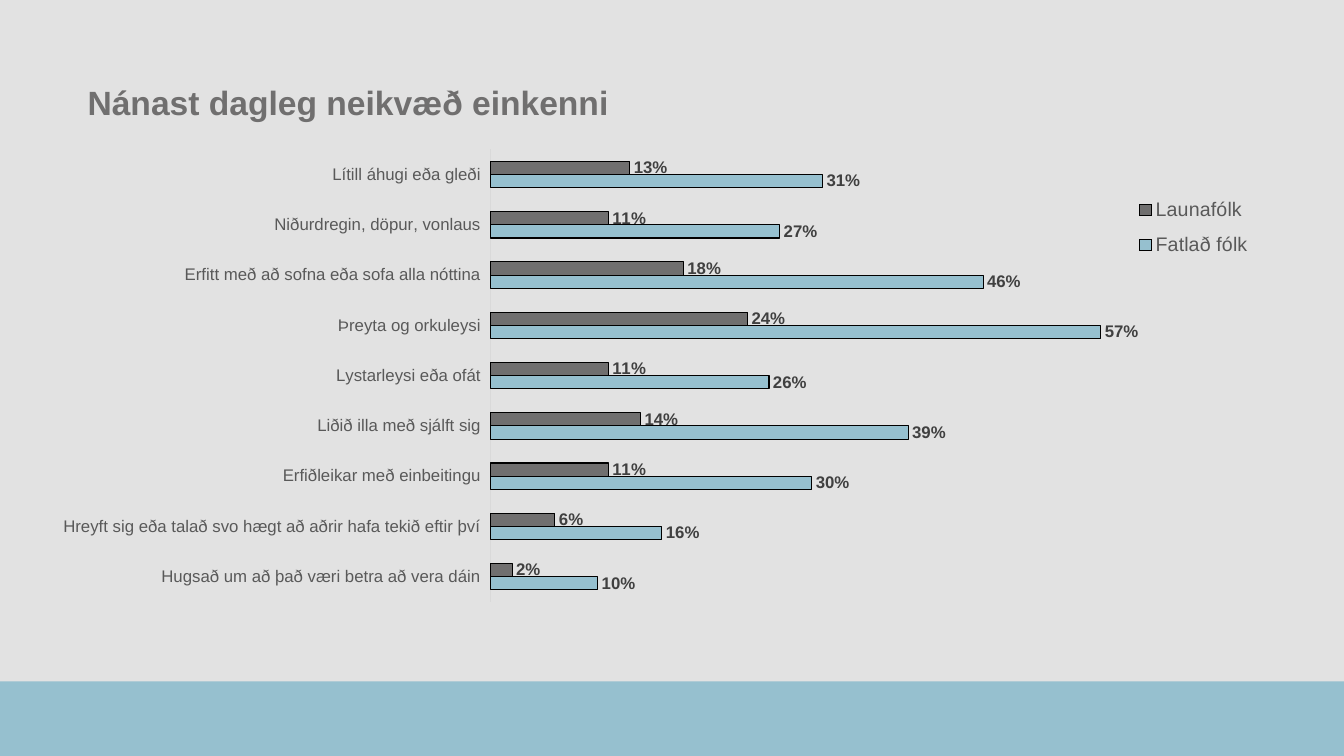
from lxml import etree
from pptx import Presentation
from pptx.chart.data import CategoryChartData
from pptx.dml.color import RGBColor
from pptx.enum.chart import XL_CHART_TYPE, XL_LABEL_POSITION, XL_LEGEND_POSITION, XL_TICK_LABEL_POSITION, XL_TICK_MARK
from pptx.enum.shapes import MSO_SHAPE
from pptx.enum.text import MSO_ANCHOR
from pptx.oxml import parse_xml
from pptx.oxml.ns import nsdecls, qn
from pptx.util import Inches, Pt

BAR_CLUSTERED = XL_CHART_TYPE.BAR_CLUSTERED
OUTSIDE_END = XL_LABEL_POSITION.OUTSIDE_END
BOTTOM = XL_LEGEND_POSITION.BOTTOM
LOW = XL_TICK_LABEL_POSITION.LOW
NO_TICK = XL_TICK_MARK.NONE
RECTANGLE = MSO_SHAPE.RECTANGLE
MIDDLE = MSO_ANCHOR.MIDDLE

BLUE = "96C0CF"
GREY = "706F6F"
TEXT_GREY = "595959"


def color(value):
    return RGBColor.from_string(value)


def manual_layout(x, y, w, h, inner=False):
    layout = parse_xml(f"<c:layout {nsdecls('c')}><c:manualLayout/></c:layout>")
    settings = [("layoutTarget", "inner")] if inner else []
    settings += [("xMode", "edge"), ("yMode", "edge"), ("x", x), ("y", y), ("w", w), ("h", h)]
    for tag, value in settings:
        etree.SubElement(layout[0], qn(f"c:{tag}")).set("val", str(value))
    return layout


prs = Presentation()
prs.slide_width = Inches(13.33)
prs.slide_height = Inches(7.5)
slide = prs.slides.add_slide(prs.slide_layouts[6])
slide.background.fill.solid()
slide.background.fill.fore_color.rgb = color("E2E2E2")

footer_band = slide.shapes.add_shape(RECTANGLE, 0, Inches(6.76), Inches(13.33), Inches(0.74))
footer_band.shadow.inherit = False
footer_band.fill.solid()
footer_band.fill.fore_color.rgb = color(BLUE)
footer_band.line.fill.background()

title = slide.shapes.add_textbox(Inches(0.77), Inches(0.7), Inches(10.24), Inches(0.68)).text_frame
title.word_wrap = True
title.vertical_anchor = MIDDLE
heading = title.paragraphs[0]
heading.text = "Nánast dagleg neikvæð einkenni"
heading.line_spacing = 0.9
heading.font.name = "Arial"
heading.font.size = Pt(24)
heading.font.bold = True
heading.font.color.rgb = color(GREY)

symptoms = [
    ("Hugsað um að það væri betra að vera dáin", 0.10, 0.02),
    ("Hreyft sig eða talað svo hægt að aðrir hafa tekið eftir því", 0.16, 0.06),
    ("Erfiðleikar með einbeitingu", 0.30, 0.11),
    ("Liðið illa með sjálft sig", 0.39, 0.14),
    ("Lystarleysi eða ofát", 0.26, 0.11),
    ("Þreyta og orkuleysi", 0.57, 0.24),
    ("Erfitt með að sofna eða sofa alla nóttina", 0.46, 0.18),
    ("Niðurdregin, döpur, vonlaus", 0.27, 0.11),
    ("Lítill áhugi eða gleði", 0.31, 0.13),
]
names, disabled_shares, worker_shares = zip(*symptoms)
symptom_data = CategoryChartData(number_format="0%")
symptom_data.categories = names
symptom_data.add_series("Fatlað fólk", disabled_shares)
symptom_data.add_series("Launafólk", worker_shares)

chart = slide.shapes.add_chart(
    BAR_CLUSTERED, Inches(0.54), Inches(1.38), Inches(12.02), Inches(5.16), symptom_data
).chart
chart.has_title = False
chart.font.name = "Arial"
chart.font.size = Pt(10)
chart.font.color.rgb = color("000000")

symptom_axis = chart.category_axis
symptom_axis.major_tick_mark = NO_TICK
symptom_axis.minor_tick_mark = NO_TICK
symptom_axis.tick_label_position = LOW
symptom_axis.format.line.color.rgb = color("D9D9D9")
symptom_axis.format.line.width = Pt(0.75)

share_axis = chart.value_axis
share_axis.minimum_scale = 0
share_axis.maximum_scale = 0.6
share_axis.has_major_gridlines = False
share_axis.visible = False

chart.has_legend = True
legend = chart.legend
legend.position = BOTTOM
legend.include_in_layout = False

for font, size in ((symptom_axis.tick_labels.font, 12), (legend.font, 14)):
    font.name = "Arial"
    font.size = Pt(size)
    font.color.rgb = color(TEXT_GREY)

bars = chart.plots[0]
bars.gap_width = 182
bars.overlap = 0
bars.vary_by_categories = False
for group, fill in zip(bars.series, (BLUE, GREY)):
    group.invert_if_negative = False
    group.format.fill.solid()
    group.format.fill.fore_color.rgb = color(fill)
    group.format.line.color.rgb = color("000000")
    group.format.line.width = Pt(0.75)
    labels = group.data_labels
    labels.show_value = True
    labels.position = OUTSIDE_END
    labels.number_format = "0%"
    labels.number_format_is_linked = False
    labels.font.name = "Arial"
    labels.font.size = Pt(12)
    labels.font.bold = True
    labels.font.color.rgb = color("404040")

plot_area = chart.element.chart.plotArea
for old_layout in plot_area.findall(qn("c:layout")):
    plot_area.remove(old_layout)
plot_area.insert(0, manual_layout(0.36, 0.02, 0.53, 0.87, inner=True))

legend_xml = chart.element.chart.find(qn("c:legend"))
for old_layout in legend_xml.findall(qn("c:layout")):
    legend_xml.remove(old_layout)
legend_xml.find(qn("c:legendPos")).addnext(manual_layout(0.89, 0.09, 0.1, 0.16))

prs.save("out.pptx")
